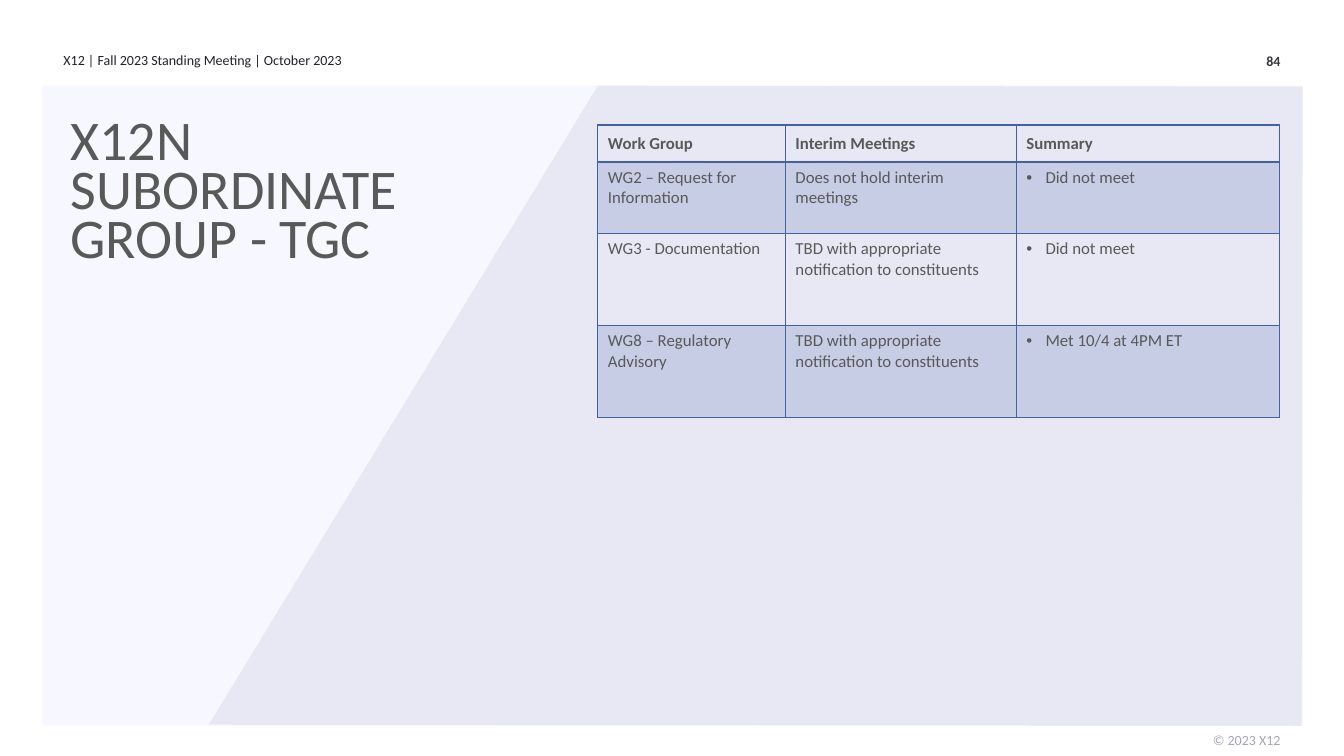
from dataclasses import dataclass
from lxml.etree import SubElement as Sub
from pptx import Presentation as Deck
from pptx.dml.color import RGBColor as Color
from pptx.enum.shapes import MSO_SHAPE as Shape
from pptx.enum.text import MSO_ANCHOR as Anchor, MSO_AUTO_SIZE as Fit, PP_ALIGN as Align
from pptx.oxml.ns import qn
from pptx.util import Inches, Pt


@dataclass(frozen=True)
class Theme:
    face: str = "Calibri"
    panel: str = "F7F7FF"
    slant: str = "E8E8F5"
    head: str = "21212B"
    page: str = "363640"
    foot: str = "A6A6BA"
    body: str = "595959"
    grid: str = "4361A3"
    tint: int = 20
    small: int = 10
    cell: int = 12
    title: int = 40
    lead: int = 35


class Page:
    def __init__(self, deck, theme):
        self.theme = theme
        self.slide = deck.slides.add_slide(deck.slide_layouts[5])
        self.shapes = self.slide.shapes

    def font(self, para, size, color, bold=False):
        font = para.font
        font.name, font.size, font.bold = self.theme.face, Pt(size), bold
        font.color.rgb = Color.from_string(color)

    def paint(self, shape, color):
        shape.shadow.inherit = False
        shape.fill.solid()
        shape.fill.fore_color.rgb = Color.from_string(color)
        shape.line.fill.background()

    def rect(self, box, color):
        self.paint(self.shapes.add_shape(Shape.RECTANGLE, *map(Inches, box)), color)

    def free(self, points, color):
        spots = [(Inches(x), Inches(y)) for x, y in points]
        form = self.shapes.build_freeform(*spots[0], scale=1.0)
        form.add_line_segments(spots[1:], close=True)
        self.paint(form.convert_to_shape(), color)

    def fill_text(self, shape, text):
        frame = shape.text_frame
        frame.word_wrap, frame.auto_size = True, Fit.NONE
        frame.vertical_anchor = Anchor.TOP
        frame.margin_left = frame.margin_right = 0
        frame.margin_top = frame.margin_bottom = 0
        frame.text = text
        return frame.paragraphs[0]

    def label(self, box, text, color, align=Align.LEFT, bold=False):
        para = self.fill_text(self.shapes.add_textbox(*map(Inches, box)), text)
        para.alignment = align
        self.font(para, self.theme.small, color, bold)

    def title(self, box, text):
        shape = self.shapes.title
        shape.left, shape.top, shape.width, shape.height = map(Inches, box)
        para = self.fill_text(shape, text)
        para.alignment, para.line_spacing = Align.LEFT, Pt(self.theme.lead)
        self.font(para, self.theme.title, self.theme.body)
        node = shape.element
        node.getparent().append(node)

    def edges(self, cell, over, under):
        props = cell._tc.get_or_add_tcPr()
        for side, width in (("L", 1), ("R", 1), ("T", over), ("B", under)):
            line = Sub(props, qn("a:ln" + side), w=str(Pt(width)))
            Sub(Sub(line, qn("a:solidFill")), qn("a:srgbClr"), val=self.theme.grid)

    def shade(self, cell, tinted):
        if not tinted:
            cell.fill.background()
            return
        cell.fill.solid()
        cell.fill.fore_color.rgb = Color.from_string(self.theme.grid)
        tone = cell._tc.tcPr.find(qn("a:solidFill")).find(qn("a:srgbClr"))
        Sub(tone, qn("a:alpha"), val=str(self.theme.tint * 1000))

    def bullet(self, para):
        props = para._p.get_or_add_pPr()
        props.set("marL", str(Inches(0.19)))
        props.set("indent", str(-Inches(0.19)))
        Sub(props, qn("a:buFont"), typeface="Arial")
        Sub(props, qn("a:buChar"), char="•")

    def table(self, spot, cols, highs, rows):
        size = sum(cols), sum(highs)
        frame = self.shapes.add_table(len(rows), len(cols), *map(Inches, (*spot, *size)))
        table = frame.table
        table.first_row = table.horz_banding = False
        for col, width in zip(table.columns, cols):
            col.width = Inches(width)
        for r, (row, high) in enumerate(zip(rows, highs)):
            table.rows[r].height = Inches(high)
            for c, text in enumerate(row):
                cell, head = table.cell(r, c), r == 0
                cell.text = text
                cell.vertical_anchor = Anchor.MIDDLE if head else Anchor.TOP
                self.edges(cell, 2 if r == 1 else 1, 2 if head else 1)
                self.shade(cell, r % 2 == 1)
                para = cell.text_frame.paragraphs[0]
                if head:
                    para.line_spacing = 0.95
                elif c == len(cols) - 1:
                    self.bullet(para)
                self.font(para, self.theme.cell, self.theme.body, head)


def main():
    deck, theme = Deck(), Theme()
    deck.slide_width, deck.slide_height = Inches(13.33), Inches(7.5)
    page = Page(deck, theme)
    page.rect((0.42, 0.85, 12.5, 6.35), theme.panel)
    page.label((0.63, 0.51, 4.5, 0.25),
               "X12 | Fall 2023 Standing Meeting | October 2023", theme.head)
    page.label((11.19, 0.52, 1.51, 0.25), "84", theme.page, Align.RIGHT, True)
    page.label((11.19, 7.26, 1.51, 0.25), "© 2023 X12", theme.foot, Align.RIGHT)
    page.free([(2.07, 7.19), (5.93, 0.85), (12.92, 0.86), (12.91, 7.2)], theme.slant)
    page.title((0.7, 1.22, 3.69, 1.9), "X12N SUBORDINATE GROUP - TGC")
    notice = "TBD with appropriate notification to constituents"
    page.table((5.93, 1.24), (1.86, 2.29, 2.61), (0.37, 0.71, 0.91, 0.91), [
        ("Work Group", "Interim Meetings", "Summary"),
        ("WG2 – Request for Information", "Does not hold interim meetings", "Did not meet"),
        ("WG3 - Documentation", notice, "Did not meet"),
        ("WG8 – Regulatory Advisory", notice, "Met 10/4 at 4PM ET"),
    ])
    deck.save("out.pptx")


if __name__ == "__main__":
    main()
